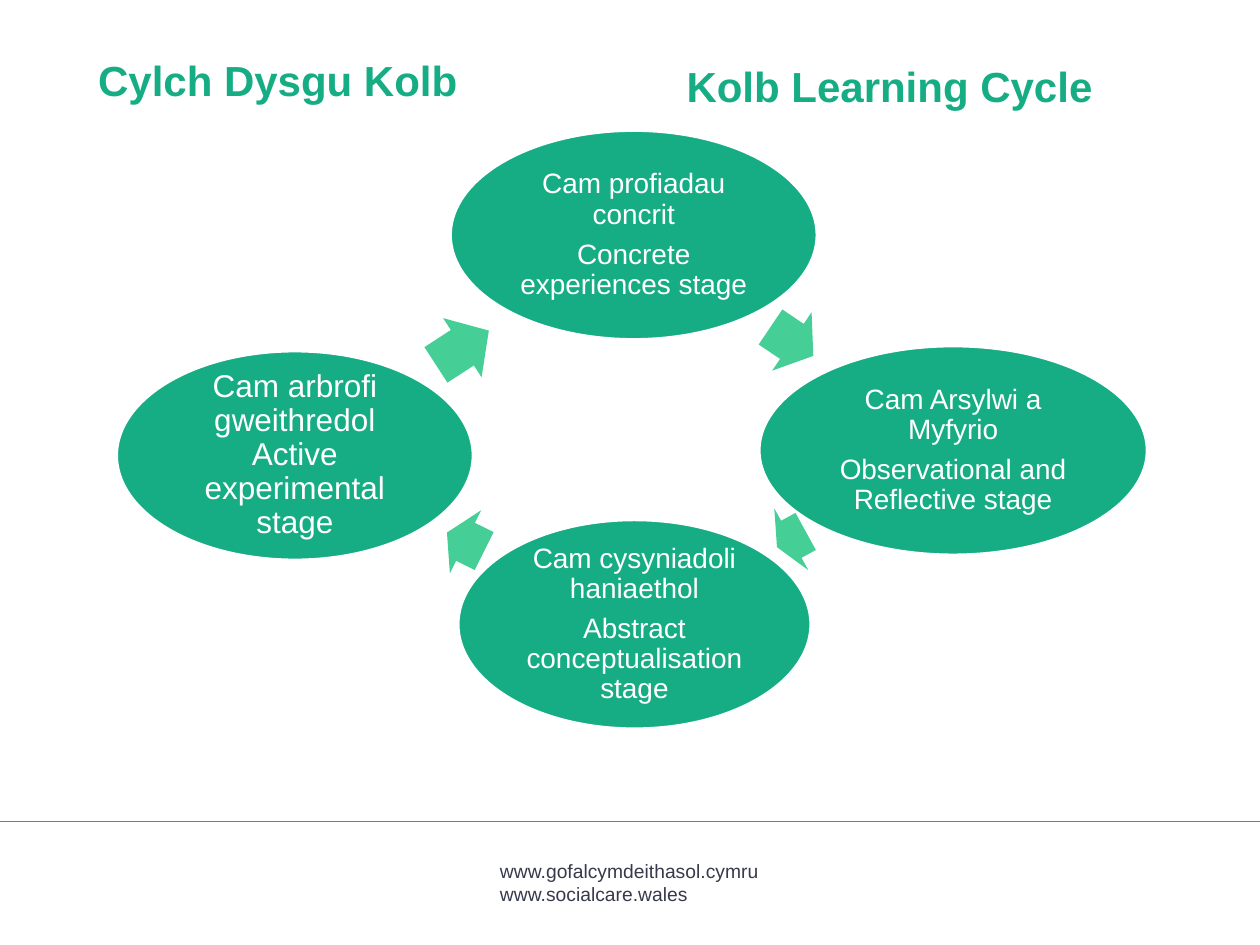
from pptx import Presentation
from pptx.dml.color import RGBColor
from pptx.enum.shapes import MSO_CONNECTOR as Connector, MSO_SHAPE as Shape
from pptx.enum.text import MSO_ANCHOR as Anchor, PP_ALIGN as Align
from pptx.oxml.ns import qn
from pptx.util import Inches, Pt
from lxml.etree import SubElement

COLORS = {"green": "16AD85", "mint": "46CE97", "white": "FFFFFF", "slate": "37394C"}
FONT = "Arial"
STAGE_HEIGHT, ARROW_HEIGHT = 1.65, 0.56

HEADINGS = [
    ("Cylch Dysgu Kolb", (0.68, 0.43, 4.02, 1)),
    ("Kolb Learning Cycle", (5.35, 0.48, 4.01, 0.94)),
]
WEB_ADDRESSES = ["www.gofalcymdeithasol.cymru", "www.socialcare.wales"]

CYCLE = [
    {"stage": [["Cam profiadau concrit"], ["Concrete experiences stage"]],
     "place": (3.58, 1.04, 2.9), "size": 16, "inset": 0.02,
     "arrow": (6.08, 2.43, 0.41), "turn": 34},
    {"stage": [["Cam Arsylwi a Myfyrio"], ["Observational and Reflective stage"]],
     "place": (6.03, 2.75, 3.07), "size": 16, "inset": 0.02,
     "arrow": (6.15, 4, 0.26), "turn": 151.2},
    {"stage": [["Cam cysyniadoli haniaethol"], ["Abstract conceptualisation stage"]],
     "place": (3.64, 4.13, 2.79), "size": 16, "inset": 0.02,
     "arrow": (3.53, 4.02, 0.33), "turn": 206.4},
    {"stage": [["Cam arbrofi gweithredol", "Active experimental stage"]],
     "place": (0.93, 2.79, 2.82), "size": 18, "inset": 0.03,
     "arrow": (3.42, 2.48, 0.5), "turn": 327},
]


def rgb(name):
    return RGBColor.from_string(COLORS[name])


def write(frame, paragraphs, size, color, bold=False, align=Align.LEFT,
          spacing=1.0, after=0):
    frame.word_wrap = True
    for index, lines in enumerate(paragraphs):
        paragraph = frame.paragraphs[0] if index == 0 else frame.add_paragraph()
        paragraph.alignment = align
        paragraph.line_spacing = spacing
        paragraph.space_after = Pt(after)
        for number, line in enumerate(lines):
            if number:
                paragraph.add_line_break()
            run = paragraph.add_run()
            run.text = line
            run.font.name = FONT
            run.font.size = Pt(size)
            run.font.bold = bold
            run.font.color.rgb = rgb(color)


def add_filled(slide, kind, box, color):
    shape = slide.shapes.add_shape(kind, *map(Inches, box))
    shape.shadow.inherit = False
    shape.fill.solid()
    shape.fill.fore_color.rgb = rgb(color)
    return shape


def add_stage(slide, step):
    oval = add_filled(slide, Shape.OVAL, (*step["place"], STAGE_HEIGHT), "green")
    oval.line.color.rgb = rgb("white")
    oval.line.width = Pt(1)
    frame = oval.text_frame
    frame.vertical_anchor = Anchor.MIDDLE
    inset = Inches(step["inset"])
    frame.margin_left = frame.margin_right = inset
    frame.margin_top = frame.margin_bottom = inset
    write(frame, step["stage"], step["size"], "white", align=Align.CENTER,
          spacing=0.9, after=round(step["size"] * 0.35, 1))


def add_arrow(slide, step):
    arrow = add_filled(slide, Shape.RIGHT_ARROW, (*step["arrow"], ARROW_HEIGHT), "mint")
    arrow.line.fill.background()
    arrow.adjustments[0] = 0.6
    arrow.adjustments[1] = 0.5
    arrow.rotation = step["turn"]


def main():
    deck = Presentation()
    deck.slide_width, deck.slide_height = Inches(10), Inches(7.5)
    slide = deck.slides.add_slide(deck.slide_layouts[6])

    footer = slide.shapes.add_textbox(*map(Inches, (3.87, 6.77, 2.26, 0.46)))
    write(footer.text_frame, [[address] for address in WEB_ADDRESSES], 11, "slate")

    rule = slide.shapes.add_connector(
        Connector.STRAIGHT, *map(Inches, (0, 6.52, 10, 6.52)))
    rule.line.color.rgb = rgb("green")
    rule.line.width = Pt(1)
    SubElement(rule._element.spPr, qn("a:effectLst"))

    for heading, box in HEADINGS:
        title = slide.shapes.add_textbox(*map(Inches, box))
        write(title.text_frame, [[heading]], 24, "green", bold=True, spacing=0.9)

    for step in CYCLE:
        add_stage(slide, step)
        add_arrow(slide, step)

    deck.save("out.pptx")


if __name__ == "__main__":
    main()
